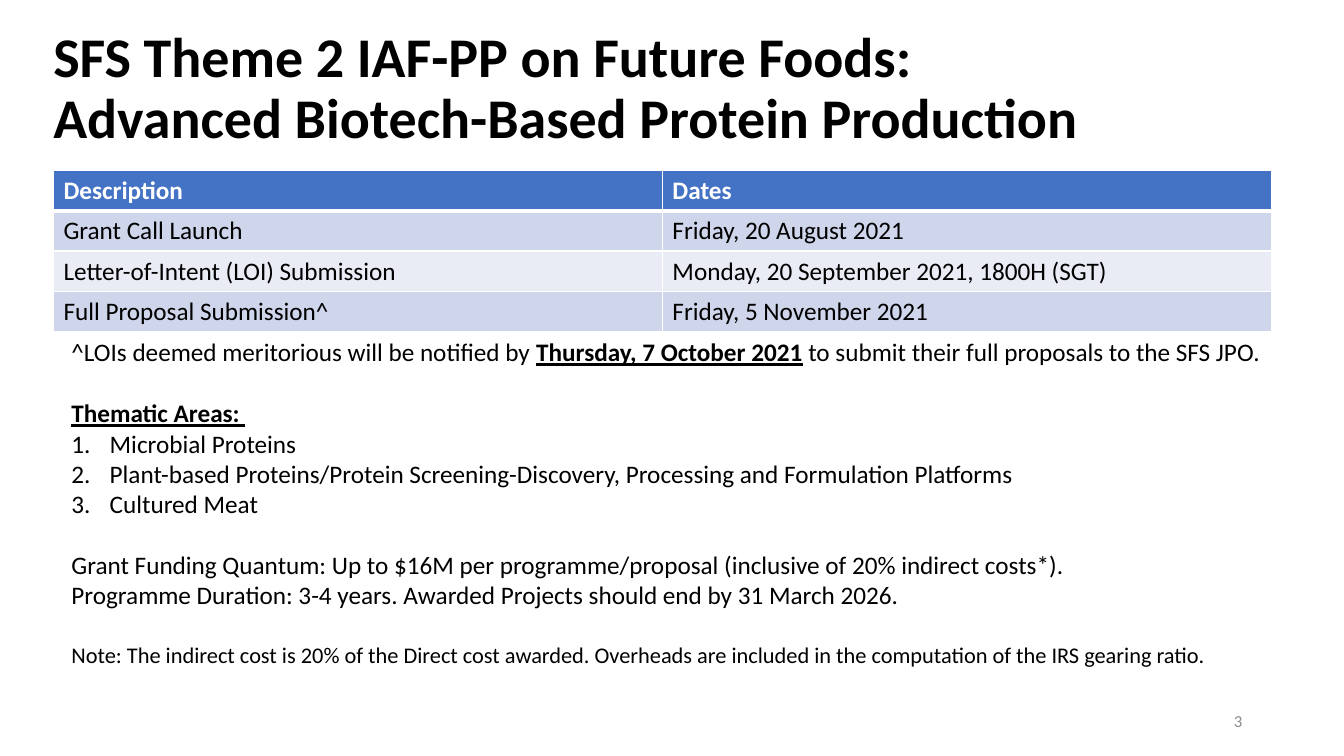
from lxml import etree
from pptx import Presentation
from pptx.dml.color import RGBColor
from pptx.enum.text import MSO_ANCHOR, PP_ALIGN
from pptx.oxml.ns import qn
from pptx.util import Inches, Pt

BLACK = RGBColor(0x00, 0x00, 0x00)
WHITE = RGBColor(0xFF, 0xFF, 0xFF)
GREY = RGBColor(0x8C, 0x8C, 0x8C)
HEADER_BLUE = RGBColor(0x44, 0x72, 0xC4)
BAND_DARK = RGBColor(0xCF, 0xD5, 0xEA)
BAND_LIGHT = RGBColor(0xE9, 0xEB, 0xF5)
TOP, MIDDLE = MSO_ANCHOR.TOP, MSO_ANCHOR.MIDDLE
RIGHT = PP_ALIGN.RIGHT

FONT = "Calibri"
LINE_GAP = 22
LIST_INDENT = Inches(0.38)

TITLE_LINES = [
    "SFS Theme 2 IAF-PP on Future Foods:",
    "Advanced Biotech-Based Protein Production",
]
SCHEDULE = [
    ("Description", "Dates"),
    ("Grant Call Launch", "Friday, 20 August 2021"),
    ("Letter-of-Intent (LOI) Submission", "Monday, 20 September 2021, 1800H (SGT)"),
    ("Full Proposal Submission^", "Friday, 5 November 2021"),
]
THEMATIC_AREAS = [
    "Microbial Proteins",
    "Plant-based Proteins/Protein Screening-Discovery, Processing and Formulation Platforms",
    "Cultured Meat",
]


def write(paragraph, text, size=18, color=BLACK, bold=False, underline=False,
          align=None, gap=0):
    run = paragraph.add_run()
    run.text = text
    run.font.name = FONT
    run.font.size = Pt(size)
    run.font.color.rgb = color
    run.font.bold = bold
    run.font.underline = underline
    if align is not None:
        paragraph.alignment = align
    if gap:
        paragraph.space_before = Pt(gap)


def add_frame(slide, left, top, width, height, anchor=TOP):
    frame = slide.shapes.add_textbox(
        Inches(left), Inches(top), Inches(width), Inches(height)).text_frame
    frame.word_wrap = True
    frame.vertical_anchor = anchor
    return frame


def number_paragraph(paragraph):
    properties = paragraph._p.get_or_add_pPr()
    properties.set("marL", str(LIST_INDENT))
    properties.set("indent", str(-LIST_INDENT))
    etree.SubElement(properties, qn("a:buFont"), typeface="+mj-lt")
    etree.SubElement(properties, qn("a:buAutoNum"), type="arabicPeriod")


def border_cell(cell, top, bottom):
    properties = cell._tc.get_or_add_tcPr()
    widths = {"a:lnL": 1, "a:lnR": 1, "a:lnT": top, "a:lnB": bottom}
    for position, (side, width) in enumerate(widths.items()):
        line = etree.Element(qn(side), w=str(Pt(width)))
        fill = etree.SubElement(line, qn("a:solidFill"))
        etree.SubElement(fill, qn("a:srgbClr"), val=str(WHITE))
        properties.insert(position, line)


def add_title(slide, left, top, width, height):
    frame = add_frame(slide, left, top, width, height, MIDDLE)
    frame.margin_bottom = Inches(0.66)
    heading = frame.paragraphs[0]
    heading.line_spacing = 0.9
    for index, line in enumerate(TITLE_LINES):
        if index:
            heading.add_line_break()
        write(heading, line, size=40, bold=True)


def add_schedule(slide, left, top, width, height):
    schedule = slide.shapes.add_table(
        len(SCHEDULE), len(SCHEDULE[0]),
        Inches(left), Inches(top), Inches(width), Inches(height)).table
    for row, entries in enumerate(SCHEDULE):
        header = row == 0
        band = HEADER_BLUE if header else BAND_DARK if row % 2 else BAND_LIGHT
        for column, entry in enumerate(entries):
            cell = schedule.cell(row, column)
            cell.fill.solid()
            cell.fill.fore_color.rgb = band
            border_cell(cell, top=3 if row == 1 else 1, bottom=3 if header else 1)
            write(cell.text_frame.paragraphs[0], entry,
                  color=WHITE if header else BLACK, bold=header)


def add_details(slide, left, top, width, height):
    frame = add_frame(slide, left, top, width, height)
    notice = frame.paragraphs[0]
    write(notice, "^LOIs deemed meritorious will be notified by ")
    write(notice, "Thursday, 7 October 2021", bold=True, underline=True)
    write(notice, " to submit their full proposals to the SFS JPO.")
    write(frame.add_paragraph(), "Thematic Areas: ", bold=True, underline=True,
          gap=LINE_GAP)
    for area in THEMATIC_AREAS:
        item = frame.add_paragraph()
        write(item, area)
        number_paragraph(item)
    write(frame.add_paragraph(),
          "Grant Funding Quantum: Up to $16M per programme/proposal "
          "(inclusive of 20% indirect costs*).", gap=LINE_GAP)
    write(frame.add_paragraph(),
          "Programme Duration: 3-4 years. Awarded Projects should end by 31 March 2026.")
    write(frame.add_paragraph(),
          "Note: The indirect cost is 20% of the Direct cost awarded. Overheads are "
          "included in the computation of the IRS gearing ratio.",
          size=16, gap=LINE_GAP)


def add_page_number(slide, left, top, width, height):
    frame = add_frame(slide, left, top, width, height, MIDDLE)
    write(frame.paragraphs[0], "3", size=12, color=GREY, align=RIGHT)


def main():
    presentation = Presentation()
    presentation.slide_width = Inches(13.33)
    presentation.slide_height = Inches(7.5)
    slide = presentation.slides.add_slide(presentation.slide_layouts[6])
    add_title(slide, 0.43, 0.47, 12.82, 1.45)
    add_schedule(slide, 0.53, 1.69, 12.08, 1.6)
    add_details(slide, 0.61, 3.29, 12.01, 3.4)
    add_page_number(slide, 9.42, 6.95, 3, 0.4)
    presentation.save("out.pptx")


if __name__ == "__main__":
    main()
